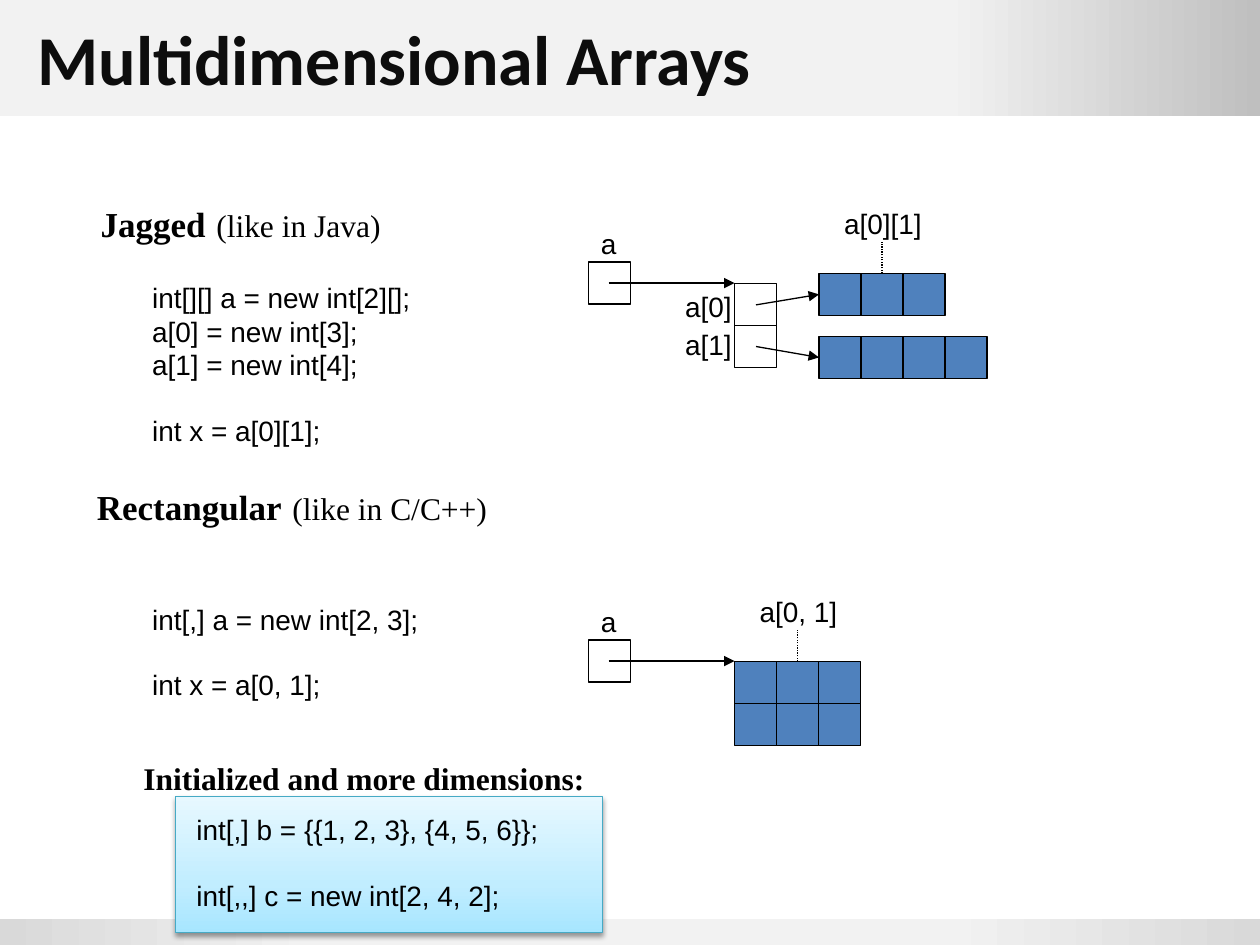
from lxml import etree
from pptx import Presentation
from pptx.dml.color import RGBColor
from pptx.enum.dml import MSO_LINE
from pptx.enum.shapes import MSO_CONNECTOR, MSO_SHAPE
from pptx.enum.text import MSO_ANCHOR, MSO_AUTO_SIZE
from pptx.oxml.ns import qn
from pptx.util import Inches, Pt

RECT = MSO_SHAPE.RECTANGLE
STRAIGHT = MSO_CONNECTOR.STRAIGHT
DOTTED = MSO_LINE.ROUND_DOT
MIDDLE = MSO_ANCHOR.MIDDLE
GROW = MSO_AUTO_SIZE.SHAPE_TO_FIT_TEXT
TOP, LEFT = 0, 1

BLACK = "000000"
BLUE = "4F81BD"
CODE = "Arial"
SERIF = "Times New Roman"
CELL = 1 / 3
CODE_GAP = 18.4  # height of one skipped line of code


def rgb(color):
    return RGBColor.from_string(color)


def add_run(p, text, size, font=CODE, bold=False, color=BLACK):
    r = p.add_run()
    r.text = text
    r.font.size = Pt(size)
    r.font.name = font
    r.font.bold = bold
    r.font.color.rgb = rgb(color)


def add_textbox(s, left, top, width, height, wrap=False):
    tf = s.shapes.add_textbox(Inches(left), Inches(top), Inches(width), Inches(height)).text_frame
    tf.word_wrap = wrap
    tf.auto_size = GROW
    return tf


def add_label(s, text, left, top, width):
    add_run(add_textbox(s, left, top, width, 0.37).paragraphs[0], text, 16)


def add_code(s, left, top, width, height, blocks):
    """Write blocks of code lines, with one line's gap between blocks."""
    tf = add_textbox(s, left, top, width, height)
    for i, block in enumerate(blocks):
        for j, line in enumerate(block):
            p = tf.add_paragraph() if i or j else tf.paragraphs[0]
            if i and not j:
                p.space_before = Pt(CODE_GAP)
            add_run(p, line, 16)


def add_heading(s, left, top, width, name, remark, wrap=False):
    p = add_textbox(s, left, top, width, 0.5, wrap).paragraphs[0]
    add_run(p, name, 20, SERIF, bold=True)
    add_run(p, " ", 24, SERIF)
    add_run(p, remark, 18, SERIF)


def add_rect(s, left, top, width, height, fill=None, line=None):
    sp = s.shapes.add_shape(RECT, Inches(left), Inches(top), Inches(width), Inches(height))
    sp.shadow.inherit = False
    if fill:
        sp.fill.solid()
        sp.fill.fore_color.rgb = rgb(fill)
    else:
        sp.fill.background()
    if line:
        sp.line.color.rgb = rgb(line)
        sp.line.width = Pt(0.75)
    else:
        sp.line.fill.background()
    return sp


def set_gradient(sp, stops, angle=0):
    sp.fill.gradient()
    sp.fill.gradient_angle = angle
    stop_list = sp._element.spPr.find(".//" + qn("a:gsLst"))
    for old in list(stop_list):
        stop_list.remove(old)
    for percent, color in stops:
        gs = etree.SubElement(stop_list, qn("a:gs"), pos=str(percent * 1000))
        etree.SubElement(gs, qn("a:srgbClr"), val=color)


def set_shadow(sp):
    effects = sp._element.spPr.find(qn("a:effectLst"))
    shadow = etree.SubElement(effects, qn("a:outerShdw"), blurRad=str(Pt(3.1)),
                              dist=str(Pt(1.6)), dir="5400000", rotWithShape="0")
    color = etree.SubElement(shadow, qn("a:srgbClr"), val=BLACK)
    etree.SubElement(color, qn("a:alpha"), val="38000")


def add_cells(s, left, top, rows, cols, fill=None):
    return [add_rect(s, left + col * CELL, top + row * CELL, CELL, CELL, fill, BLACK)
            for row in range(rows) for col in range(cols)]


def add_line(s, x1, y1, x2, y2):
    line = s.shapes.add_connector(STRAIGHT, Inches(x1), Inches(y1), Inches(x2), Inches(y2))
    line.line.color.rgb = rgb(BLACK)
    line.line.width = Pt(0.75)
    etree.SubElement(line._element.spPr, qn("a:effectLst"))
    return line


def add_arrow(s, x1, y1, x2, y2):
    arrow = add_line(s, x1, y1, x2, y2)
    etree.SubElement(arrow.line._get_or_add_ln(), qn("a:tailEnd"), type="triangle")
    return arrow


def add_callout(s, text, cell, x, top):
    """Name a cell with a label above it and a dotted line."""
    add_label(s, text, x - 0.4, top - 0.58, 0.82)
    line = add_line(s, x, top, x, top - 0.25)
    line.line.dash_style = DOTTED
    line.begin_connect(cell, TOP)


def add_variable(s, top):
    """Draw variable a with its arrow to the array."""
    add_label(s, "a", 4.67, top - 0.33, 0.32)
    add_cells(s, 4.67, top, 1, 1)
    add_arrow(s, 4.83, top + CELL / 2, 5.83, top + CELL / 2)


def add_bands(s):
    set_gradient(add_rect(s, 0, 0, 10, 0.92), [(75, "F2F2F2"), (100, "BFBFBF")])
    set_gradient(add_rect(s, 0, 7.29, 10, 0.21),
                 [(0, "D9D9D9"), (25, "F2F2F2"), (75, "F2F2F2"), (100, "D9D9D9")])


def add_title(s, text):
    tf = add_textbox(s, 0.2, 0, 9.61, 0.92, wrap=True)
    tf.auto_size = MSO_AUTO_SIZE.NONE
    tf.vertical_anchor = MIDDLE
    add_run(tf.paragraphs[0], text, 40, "Calibri", bold=True, color="0D0D0D")


def add_jagged(s):
    add_code(s, 1.11, 2.18, 2.27, 1.44, [
        ["int[][] a = new int[2][];", "a[0] = new int[3];", "a[1] = new int[4];"],
        ["int x = a[0][1];"]])
    add_heading(s, 0.7, 1.5, 2.42, "Jagged", "(like in Java)")
    add_variable(s, 2.08)
    add_cells(s, 5.83, 2.25, 2, 1)
    first = add_cells(s, 6.5, 2.17, 1, 3, BLUE)
    second = add_cells(s, 6.5, 2.67, 1, 4, BLUE)
    for row, y in ((first, 2.42), (second, 2.75)):
        add_arrow(s, 6, y, 6.5, y).end_connect(row[0], LEFT)
    add_label(s, "a[0]", 5.34, 2.25, 0.57)
    add_label(s, "a[1]", 5.34, 2.55, 0.57)
    add_callout(s, "a[0][1]", first[1], 7, 2.17)


def add_rectangular(s):
    add_code(s, 1.11, 4.73, 2.33, 0.9, [["int[,] a = new int[2, 3];"], ["int x = a[0, 1];"]])
    add_heading(s, 0.67, 3.75, 10.05, "Rectangular", "(like in C/C++)", wrap=True)
    add_variable(s, 5.08)
    cells = add_cells(s, 5.83, 5.25, 2, 3, BLUE)
    add_callout(s, "a[0, 1]", cells[1], 6.33, 5.25)


def add_initialized(s):
    panel = add_rect(s, 1.39, 6.32, 3.39, 1.08, line="46AAC5")
    set_gradient(panel, [(0, "A7E6FF"), (35, "C1EDFF"), (100, "E7F8FF")], 90)
    set_shadow(panel)
    tf = add_textbox(s, 1.04, 5.92, 3.74, 1.35)
    tf.margin_top = Inches(0.1)
    add_run(tf.paragraphs[0], "Initialized and more dimensions:", 18, SERIF, bold=True)
    for gap, code in ((9.2, "int[,] b = {{1, 2, 3}, {4, 5, 6}};"),
                      (CODE_GAP, "int[,,] c = new int[2, 4, 2];")):
        p = tf.add_paragraph()
        tabs = etree.SubElement(p._p.get_or_add_pPr(), qn("a:tabLst"))
        etree.SubElement(tabs, qn("a:tab"), pos=str(Inches(0.42)), algn="l")
        p.space_before = Pt(gap)
        add_run(p, "\t" + code, 16)


def main():
    prs = Presentation()
    prs.slide_width, prs.slide_height = Inches(10), Inches(7.5)
    s = prs.slides.add_slide(prs.slide_layouts[6])
    add_bands(s)
    add_title(s, "Multidimensional Arrays")
    add_jagged(s)
    add_rectangular(s)
    add_initialized(s)
    prs.save("out.pptx")


if __name__ == "__main__":
    main()
